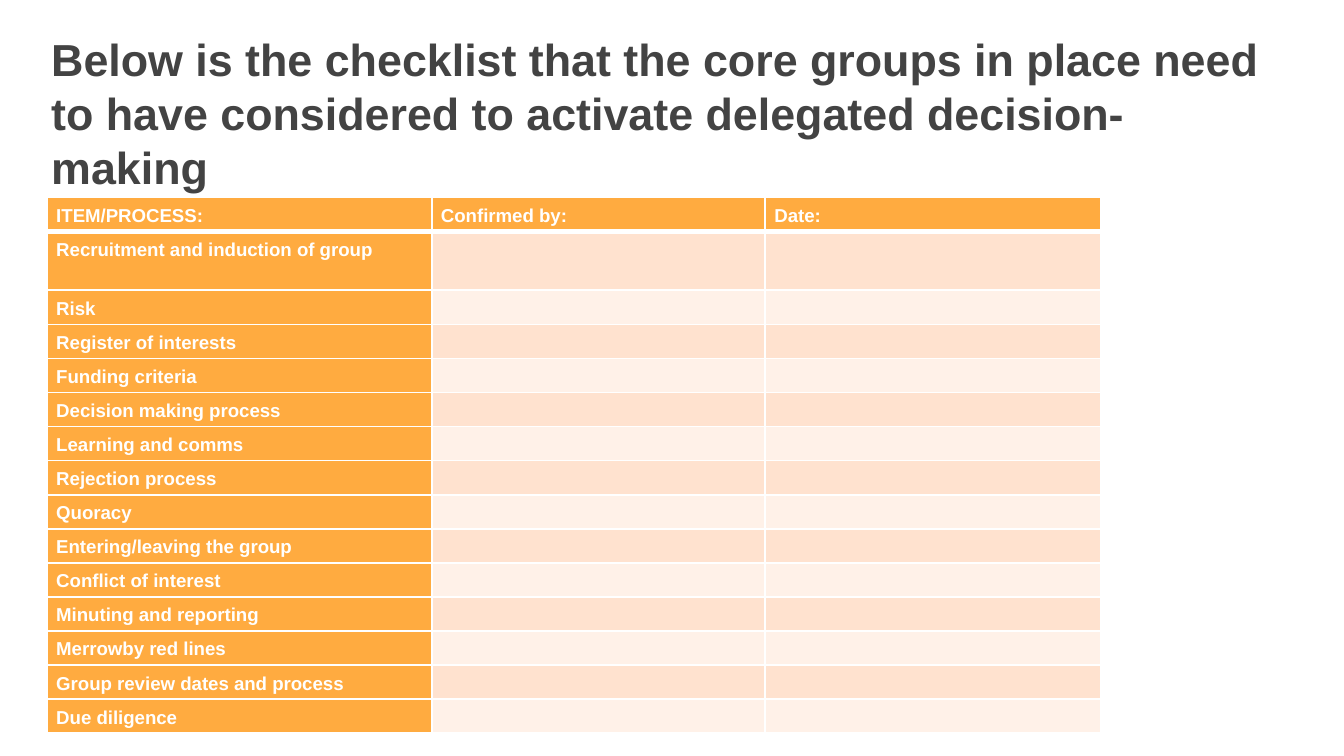
"""Build a slide with a checklist table for delegated decision-making."""
from lxml.etree import SubElement
from pptx import Presentation
from pptx.dml.color import RGBColor
from pptx.enum.text import MSO_ANCHOR, MSO_AUTO_SIZE, PP_ALIGN
from pptx.oxml.ns import qn
from pptx.util import Pt

PX = 5715
FONT = "Arial"
WHITE = RGBColor(0xFF, 0xFF, 0xFF)
CHARCOAL = RGBColor(0x43, 0x43, 0x43)
ORANGE = RGBColor(0xFF, 0xAB, 0x40)
PEACH = RGBColor(0xFF, 0xE2, 0xCF)
PALE_PEACH = RGBColor(0xFF, 0xF1, 0xE8)

HEADING = ("Below is the checklist that the core groups in place need to have "
           "considered to activate delegated decision-making")
COLUMNS = [("ITEM/PROCESS:", 458), ("Confirmed by:", 397), ("Date:", 400)]
ITEMS = [
    "Recruitment and induction of group",
    "Risk",
    "Register of interests",
    "Funding criteria",
    "Decision making process",
    "Learning and comms",
    "Rejection process",
    "Quoracy",
    "Entering/leaving the group",
    "Conflict of interest",
    "Minuting and reporting",
    "Merrowby red lines",
    "Group review dates and process",
    "Due diligence",
]
ROW_HEIGHT = 40
FIRST_ITEM_HEIGHT = 70
CELL_TEXT_SIZE = 10


def px(length):
    return length * PX


def format_text(paragraph, size, color, spacing):
    paragraph.line_spacing = spacing
    for run in paragraph.runs:
        run.font.name = FONT
        run.font.size = Pt(size)
        run.font.bold = True
        run.font.color.rgb = color


def add_heading(slide):
    heading = slide.shapes.title
    heading.left, heading.top = px(45), px(22)
    heading.width, heading.height = px(1491), px(728)
    frame = heading.text_frame
    frame.text = HEADING
    frame.word_wrap = True
    frame.auto_size = MSO_AUTO_SIZE.NONE
    frame.vertical_anchor = MSO_ANCHOR.TOP
    frame.margin_left = frame.margin_right = px(16)
    frame.margin_top = frame.margin_bottom = px(16)
    frame.paragraphs[0].alignment = PP_ALIGN.LEFT
    format_text(frame.paragraphs[0], 24, CHARCOAL, 1.0)


def set_border(cell, side, width):
    border = SubElement(cell._tc.get_or_add_tcPr(), qn(f"a:ln{side}"), w=str(Pt(width)))
    fill = SubElement(border, qn("a:solidFill"))
    SubElement(fill, qn("a:srgbClr"), val=str(WHITE))


def fill_cell(cell, text, color, top=1, bottom=1):
    for side, width in {"L": 1, "R": 1, "T": top, "B": bottom}.items():
        set_border(cell, side, width)
    cell.fill.solid()
    cell.fill.fore_color.rgb = color
    cell.margin_left = cell.margin_right = px(11)
    cell.margin_top = cell.margin_bottom = px(6)
    paragraph = cell.text_frame.paragraphs[0]
    if text:
        paragraph.text = text
        paragraph.alignment = PP_ALIGN.JUSTIFY
        format_text(paragraph, CELL_TEXT_SIZE, WHITE, 1.15)
    else:
        SubElement(paragraph._p, qn("a:endParaRPr"), sz=str(CELL_TEXT_SIZE * 100))


def add_checklist(slide):
    heights = [ROW_HEIGHT, FIRST_ITEM_HEIGHT] + [ROW_HEIGHT] * (len(ITEMS) - 1)
    total_width = sum(width for _, width in COLUMNS)
    checklist = slide.shapes.add_table(
        len(heights), len(COLUMNS), px(56), px(235),
        px(total_width), px(sum(heights))).table
    for row, height in zip(checklist.rows, heights):
        row.height = px(height)
    for index, (label, width) in enumerate(COLUMNS):
        checklist.columns[index].width = px(width)
        fill_cell(checklist.cell(0, index), label, ORANGE, bottom=3)
    for row, item in enumerate(ITEMS, start=1):
        band = PEACH if row % 2 else PALE_PEACH
        top = 3 if row == 1 else 1
        fill_cell(checklist.cell(row, 0), item, ORANGE, top)
        for column in range(1, len(COLUMNS)):
            fill_cell(checklist.cell(row, column), "", band, top)


def main():
    deck = Presentation()
    deck.slide_width, deck.slide_height = px(1600), px(900)
    slide = deck.slides.add_slide(deck.slide_layouts[5])
    add_heading(slide)
    add_checklist(slide)
    deck.save("out.pptx")


if __name__ == "__main__":
    main()
